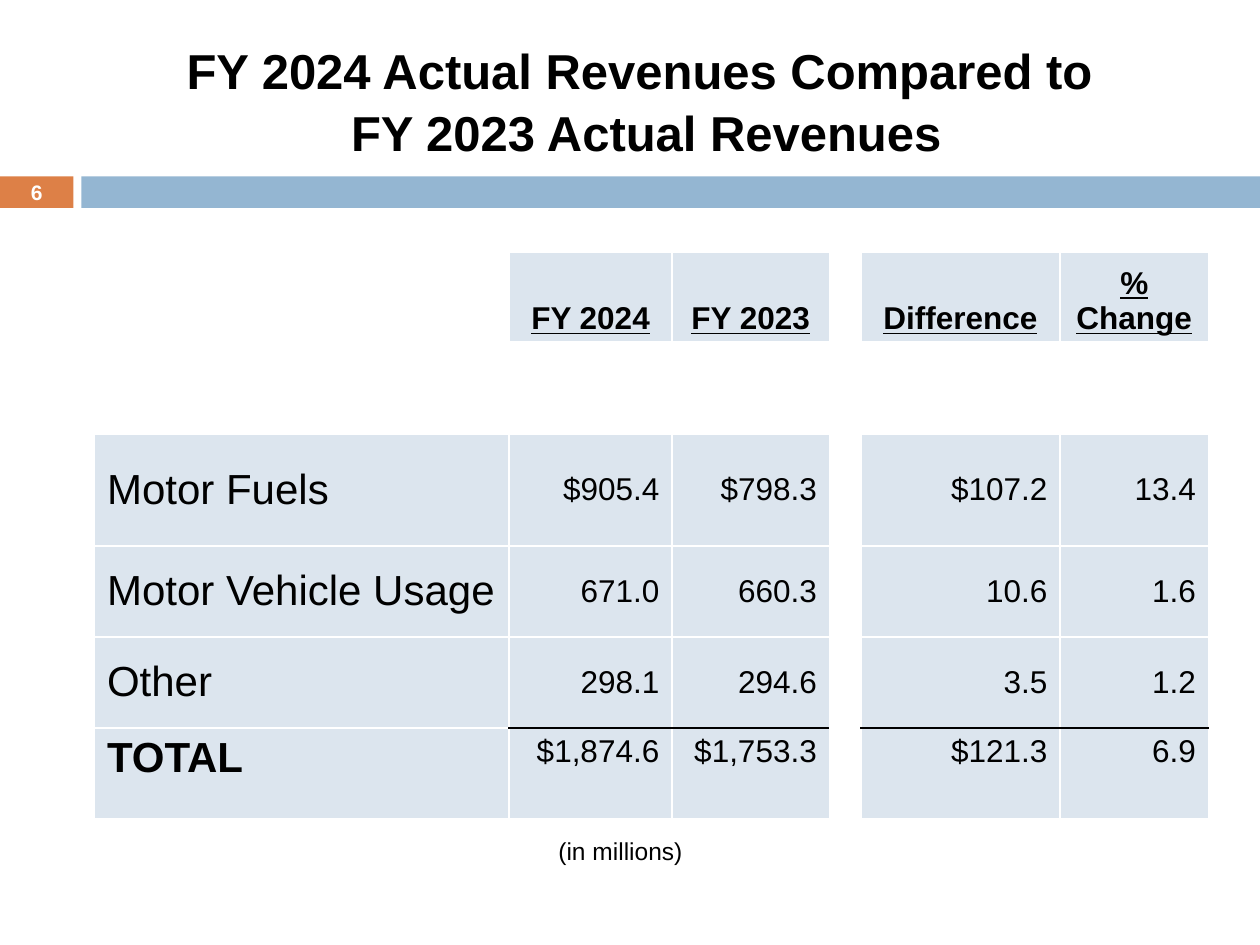
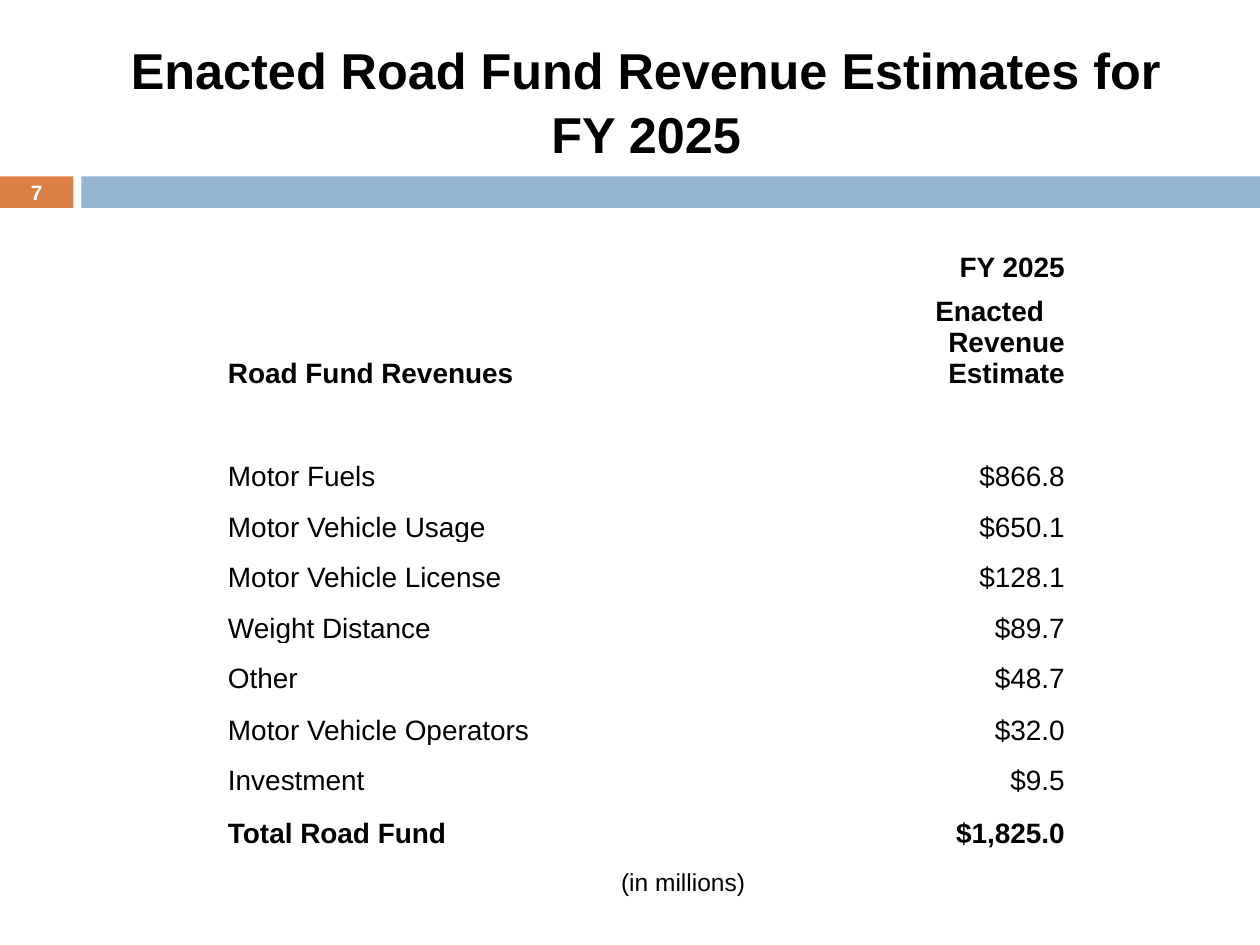
from lxml import etree
from pptx import Presentation
from pptx.dml.color import RGBColor
from pptx.enum.shapes import MSO_SHAPE
from pptx.enum.text import MSO_ANCHOR, PP_ALIGN
from pptx.oxml.ns import qn
from pptx.util import Pt

RECT = MSO_SHAPE.RECTANGLE
TOP, MIDDLE, BOTTOM = MSO_ANCHOR.TOP, MSO_ANCHOR.MIDDLE, MSO_ANCHOR.BOTTOM
LEFT, CENTER, RIGHT = PP_ALIGN.LEFT, PP_ALIGN.CENTER, PP_ALIGN.RIGHT

BLACK = RGBColor(0, 0, 0)
WHITE = RGBColor(255, 255, 255)
ORANGE = RGBColor(0xDD, 0x80, 0x47)
BLUE = RGBColor(0x94, 0xB6, 0xD2)
PALE_BLUE = RGBColor(0xDC, 0xE5, 0xEE)
FONT = "Arial"

# Content: revenue comparison
COMPARE_TITLE = ["FY 2024 Actual Revenues Compared to ", "FY 2023 Actual Revenues"]
COMPARE_ROWS = [
    ["", "FY 2024", "FY 2023", "", "Difference", "% Change"],
    [""] * 6,
    ["Motor Fuels", "$905.4", "$798.3", "", "$107.2", "13.4"],
    ["Motor Vehicle Usage", "671.0", "660.3", "", "10.6", "1.6"],
    ["Other", "298.1", "294.6", "", "3.5", "1.2"],
    ["TOTAL", "$1,874.6", "$1,753.3", "", "$121.3", "6.9"],
]
COMPARE_WIDTHS = [237, 93, 90, 18, 113.8, 84.8]
COMPARE_HEIGHTS = [52, 52, 64, 52, 52, 52]

# Content: enacted estimates
ESTIMATE_TITLE = ["Enacted Road Fund Revenue Estimates for FY 2025"]
ESTIMATE_ROWS = [
    ("", "FY 2025"),
    ("Road Fund Revenues", "Enacted\nRevenue Estimate"),
    ("", ""),
    ("Motor Fuels", "$866.8"),
    ("Motor Vehicle Usage", "$650.1"),
    ("Motor Vehicle License", "$128.1"),
    ("Weight Distance", "$89.7"),
    ("Other", "$48.7"),
    ("Motor Vehicle Operators", "$32.0"),
    ("Investment", "$9.5"),
    ("Total Road Fund", "$1,825.0"),
]
ESTIMATE_WIDTHS = [285, 107.3, 87.2]
ESTIMATE_HEIGHTS = [30.2, 60.5, 30.2] + [28.8] * 5 + [29.5, 28.8, 30.2]

UNITS = "(in millions)"


def add_run(p, text, size, color=BLACK, bold=False, underline=False):
    r = p.add_run()
    r.text = text
    f = r.font
    f.name, f.size, f.bold, f.underline = FONT, Pt(size), bold, underline
    f.color.rgb = color


def add_text(s, box, lines, size, align=LEFT, anchor=TOP, wrap=True, spacing=None, **style):
    tf = s.shapes.add_textbox(*map(Pt, box)).text_frame
    tf.word_wrap, tf.vertical_anchor = wrap, anchor
    p = tf.paragraphs[0]
    p.alignment, p.line_spacing = align, spacing
    for i, line in enumerate(lines):
        if i:
            p.add_line_break()
        add_run(p, line, size, **style)


def add_bar(s, left, width, color):
    sp = s.shapes.add_shape(RECT, Pt(left), Pt(100.8), Pt(width), Pt(18))
    sp.shadow.inherit = False
    sp.fill.solid()
    sp.fill.fore_color.rgb = color
    sp.line.fill.background()


def add_page(prs, title, title_size, number, number_size):
    """Blank slide with the shared title, bands and page number."""
    s = prs.slides.add_slide(prs.slide_layouts[6])
    add_bar(s, 0, 42, ORANGE)
    add_bar(s, 46.5, 673.5, BLUE)
    add_text(s, (48, 18, 642.5, 78), title, title_size, CENTER, MIDDLE,
             spacing=1.05, bold=True)
    add_text(s, (0, 100, 42, 19.5), [str(number)], number_size, CENTER, MIDDLE,
             color=WHITE, bold=True)
    return s


def add_grid(s, left, top, widths, heights):
    """Plain table with no banding and no cell fills."""
    frame = s.shapes.add_table(len(heights), len(widths), Pt(left), Pt(top),
                               Pt(sum(widths)), Pt(sum(heights)))
    table = frame.table
    table.first_row = table.horz_banding = False
    for col, width in zip(table.columns, widths):
        col.width = Pt(width)
    for row, height in zip(table.rows, heights):
        row.height = Pt(height)
    for cell in table.iter_cells():
        cell.fill.background()
    return table


def set_borders(cell, **sides):
    """Draw all four borders: white 1 pt unless a side names (color, width)."""
    tc_pr = cell._tc.get_or_add_tcPr()
    for i, side in enumerate("LRTB"):
        color, width = sides.get(side, (WHITE, 1))
        ln = etree.Element(qn("a:ln" + side), w=str(Pt(width)))
        fill = etree.SubElement(ln, qn("a:solidFill"))
        etree.SubElement(fill, qn("a:srgbClr"), val=str(color))
        tc_pr.insert(i, ln)


def fill_cell(cell, text, size, aligns, anchor, **style):
    """Write one paragraph per line, each with its own alignment."""
    cell.vertical_anchor = anchor
    tf = cell.text_frame
    for i, (line, align) in enumerate(zip(text.split("\n"), aligns)):
        p = tf.add_paragraph() if i else tf.paragraphs[0]
        p.alignment = align
        add_run(p, line, size, **style)


def build_comparison(prs):
    s = add_page(prs, COMPARE_TITLE, 28, 6, 12)
    table = add_grid(s, 54, 144, COMPARE_WIDTHS, COMPARE_HEIGHTS)
    total = len(COMPARE_ROWS) - 1
    for i, row in enumerate(COMPARE_ROWS):
        for j, text in enumerate(row):
            cell = table.cell(i, j)
            sides = {"B": (WHITE, 3)} if i == 0 else {}
            if text and j and i >= total - 1:
                sides["T" if i == total else "B"] = (BLACK, 1)
            set_borders(cell, **sides)
            if not text:
                continue
            cell.fill.solid()
            cell.fill.fore_color.rgb = PALE_BLUE
            if i == 0:
                fill_cell(cell, text, 18, [CENTER], BOTTOM, bold=True, underline=True)
            else:
                fill_cell(cell, text, 18 if j else 24, [RIGHT if j else LEFT],
                          TOP if i == total else MIDDLE, bold=i == total and j == 0)
    add_text(s, (312, 474, 126, 24.5), [UNITS], 14)


def build_estimates(prs):
    s = add_page(prs, ESTIMATE_TITLE, 28.8, 7, 11.9)
    table = add_grid(s, 129.6, 131.8, ESTIMATE_WIDTHS, ESTIMATE_HEIGHTS)
    last = len(ESTIMATE_ROWS) - 1
    for i, (label, value) in enumerate(ESTIMATE_ROWS):
        value_aligns = [CENTER, RIGHT] if "\n" in value else [RIGHT]
        for j, text, aligns in ((0, label, [LEFT]), (2, value, value_aligns)):
            if text:
                cell = table.cell(i, j)
                cell.margin_left = cell.margin_right = cell.margin_top = Pt(0.7)
                cell.margin_bottom = Pt(0)
                fill_cell(cell, text, 16, aligns, BOTTOM, bold=i < 2 or i == last)
    add_text(s, (347.8, 491.8, 85.7, 24.5), [UNITS], 14, wrap=False)


def main():
    prs = Presentation()
    prs.slide_width, prs.slide_height = Pt(720), Pt(540)
    build_comparison(prs)
    build_estimates(prs)
    prs.save("out.pptx")


if __name__ == "__main__":
    main()
